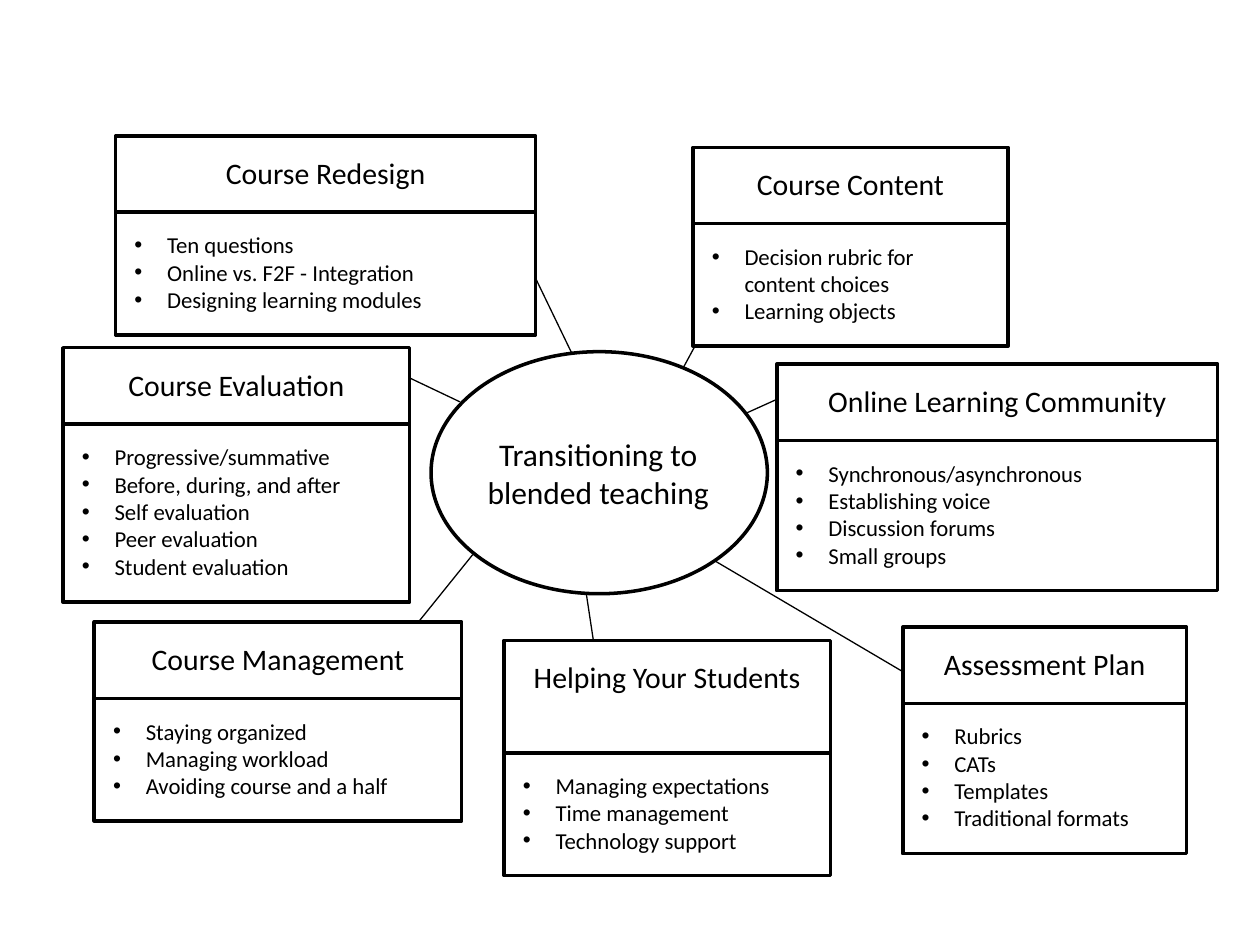
from lxml import etree
from pptx import Presentation
from pptx.dml.color import RGBColor
from pptx.enum.shapes import MSO_CONNECTOR, MSO_SHAPE
from pptx.enum.text import MSO_ANCHOR, MSO_AUTO_SIZE, PP_ALIGN
from pptx.oxml.ns import qn
from pptx.util import Cm, Pt

STRAIGHT = MSO_CONNECTOR.STRAIGHT
RECTANGLE = MSO_SHAPE.RECTANGLE
OVAL = MSO_SHAPE.OVAL
TOP = MSO_ANCHOR.TOP
NO_AUTOFIT = MSO_AUTO_SIZE.NONE
CENTER = PP_ALIGN.CENTER
LEFT = PP_ALIGN.LEFT

BLACK = "000000"
WHITE = "FFFFFF"
TITLE_ONLY = 5
HEADING_HEIGHT = 1.54
LINE_HEIGHT = 0.56
LIST_PADDING = 0.79
INDENT = Cm(0.66)

FRAME = {"word_wrap": True, "auto_size": NO_AUTOFIT, "vertical_anchor": TOP}
INSETS = {f"margin_{side}": Cm(0.38) for side in ("left", "top", "right", "bottom")}
HEADING_FONT = {"name": "Calibri", "size": Pt(17)}
LIST_FONT = {"name": "Calibri", "size": Pt(13)}
TOPIC_FONT = {"name": "Calibri", "size": Pt(18)}

CARDS = [
    ("Course Redesign", (2.33, 2.74, 8.47), HEADING_HEIGHT, 3,
     ["Ten questions", "Online vs. F2F - Integration", "Designing learning modules"]),
    ("Course Content", (13.97, 2.97, 6.35), HEADING_HEIGHT, 3,
     ["Decision rubric for content choices", "Learning objects"]),
    ("Course Evaluation", (1.27, 7.01, 6.99), HEADING_HEIGHT, 5,
     ["Progressive/summative", "Before, during, and after", "Self evaluation",
      "Peer evaluation", "Student evaluation"]),
    ("Online Learning Community", (15.66, 7.34, 8.89), HEADING_HEIGHT, 4,
     ["Synchronous/asynchronous", "Establishing voice", "Discussion forums",
      "Small groups"]),
    ("Course Management", (1.9, 12.54, 7.41), HEADING_HEIGHT, 3,
     ["Staying organized", "Managing workload", "Avoiding course and a half"]),
    ("Helping Your Students", (10.16, 12.91, 6.58), 2.27, 3,
     ["Managing expectations", "Time management", "Technology support"]),
    ("Assessment Plan", (18.2, 12.64, 5.72), HEADING_HEIGHT, 4,
     ["Rubrics", "CATs", "Templates", "Traditional formats"]),
]

SPOKES = [
    (15.32, 4.55, 13.77, 7.42),
    (10.16, 4.29, 11.56, 7.19),
    (15.04, 8.33, 15.66, 8.05),
    (14.4, 11.3, 18.2, 13.54),
    (9.53, 11.18, 8.41, 12.57),
    (9.27, 8.1, 8.26, 7.62),
    (11.81, 11.91, 11.96, 12.9),
]


def color(value):
    return RGBColor.from_string(value)


def apply_format(target, values):
    for name, value in values.items():
        setattr(target, name, value)


def add_spoke(slide, ends):
    spoke = slide.shapes.add_connector(STRAIGHT, *map(Cm, ends))
    spoke.line.color.rgb = color(BLACK)
    spoke.line.width = Pt(0.75)
    etree.SubElement(spoke._element.spPr, qn("a:effectLst"))


def add_outline(slide, preset, box):
    outline = slide.shapes.add_shape(preset, *map(Cm, box))
    outline.shadow.inherit = False
    outline.fill.solid()
    outline.fill.fore_color.rgb = color(WHITE)
    outline.line.color.rgb = color(BLACK)
    outline.line.width = Pt(2)
    return outline


def write_lines(frame, lines, font, alignment):
    apply_format(frame, FRAME)
    frame.text = "\n".join(lines)
    for paragraph in frame.paragraphs:
        paragraph.alignment = alignment
        apply_format(paragraph.font, font)
        paragraph.font.color.rgb = color(BLACK)


def add_bullet(paragraph):
    properties = paragraph._p.get_or_add_pPr()
    properties.set("marL", str(INDENT))
    properties.set("indent", str(-INDENT))
    bullet_font = etree.Element(qn("a:buFont"), typeface="Arial")
    bullet = etree.Element(qn("a:buChar"), char="•")
    properties.insert(0, bullet_font)
    properties.insert(1, bullet)


def add_card(slide, heading, place, heading_height, line_count, points):
    left, top, width = place
    list_height = LIST_PADDING + LINE_HEIGHT * line_count
    details = add_outline(slide, RECTANGLE, (left, top + heading_height, width, list_height))
    header = add_outline(slide, RECTANGLE, (left, top, width, heading_height))
    for part in (details, header):
        apply_format(part.text_frame, INSETS)
    write_lines(details.text_frame, points, LIST_FONT, LEFT)
    for paragraph in details.text_frame.paragraphs:
        add_bullet(paragraph)
    write_lines(header.text_frame, [heading], HEADING_FONT, CENTER)


def add_topic(slide):
    add_outline(slide, OVAL, (8.69, 7.09, 6.78, 4.88))
    topic = slide.shapes.title
    apply_format(topic, {"left": Cm(9.42), "top": Cm(8.64),
                         "width": Cm(5.28), "height": Cm(1.8)})
    write_lines(topic.text_frame, ["Transitioning to blended teaching"], TOPIC_FONT, CENTER)
    slide.shapes._spTree.append(topic._element)


def main():
    presentation = Presentation()
    presentation.slide_width = Cm(25.4)
    presentation.slide_height = Cm(19.05)
    slide = presentation.slides.add_slide(presentation.slide_layouts[TITLE_ONLY])
    for ends in SPOKES:
        add_spoke(slide, ends)
    for card in CARDS:
        add_card(slide, *card)
    add_topic(slide)
    presentation.save("out.pptx")


if __name__ == "__main__":
    main()
